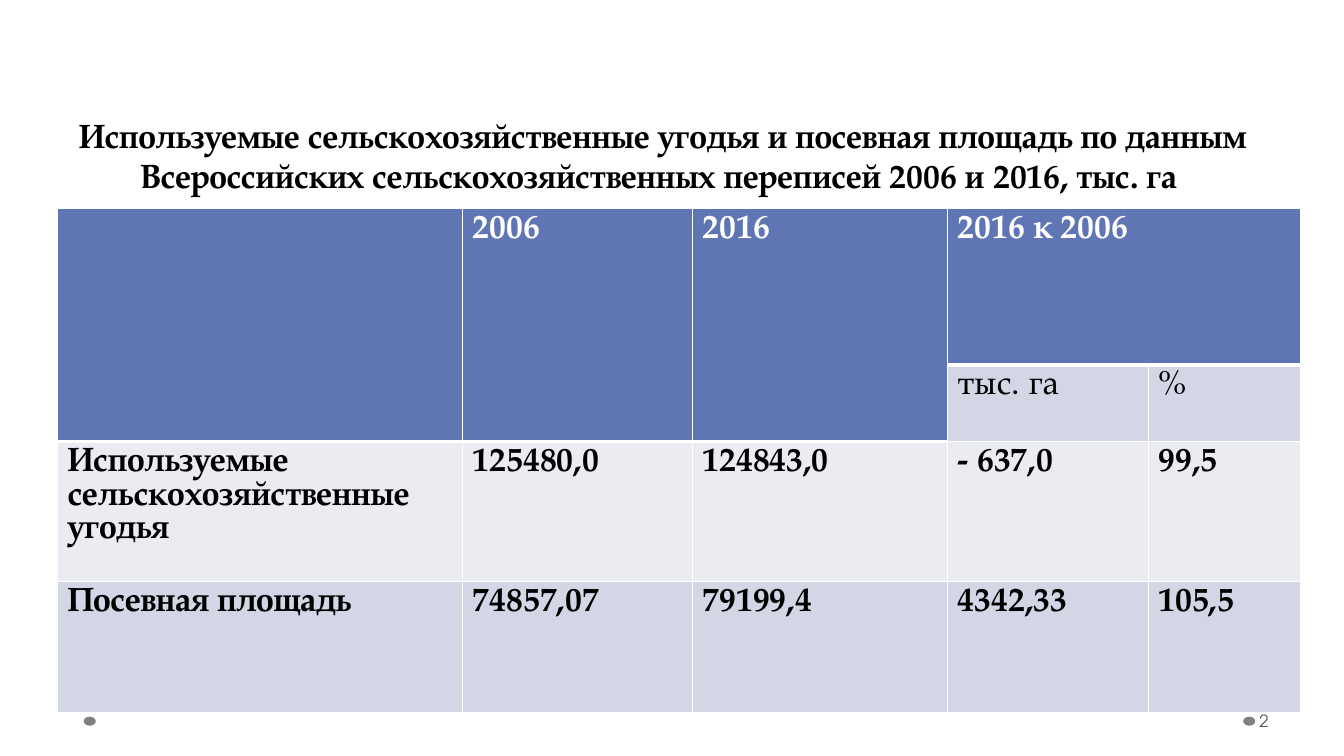
from lxml import etree
from pptx import Presentation
from pptx.dml.color import RGBColor
from pptx.enum.shapes import MSO_SHAPE
from pptx.enum.text import MSO_ANCHOR, MSO_AUTO_SIZE, PP_ALIGN
from pptx.oxml.ns import qn
from pptx.util import Inches, Pt

# Content
TITLE = ("Используемые сельскохозяйственные угодья и посевная площадь по данным "
         "Всероссийских сельскохозяйственных переписей 2006 и 2016, тыс. га ")
ROWS = [
    ("", "2006", "2016", "2016 к 2006", ""),
    ("", "", "", "тыс. га", "%"),
    ("Используемые сельскохозяйственные угодья", "125480,0", "124843,0", "- 637,0", "99,5"),
    ("Посевная площадь", "74857,07", "79199,4", "4342,33", "105,5"),
]
PAGE_NUMBER = "2"

# Format
COL_WIDTHS = (4.02, 2.28, 2.53, 1.99, 1.51)
ROW_HEIGHTS = (1.55, 0.76, 1.39, 1.3)
TALL_HEADERS = 3  # leading columns whose header spans two rows
SERIF, SANS = "TeX Gyre Pagella", "TeX Gyre Adventor"
BLACK = RGBColor(0x00, 0x00, 0x00)
WHITE = RGBColor(0xFF, 0xFF, 0xFF)
HEADER_BLUE = RGBColor(0x60, 0x76, 0xB4)
BAND_DARK = RGBColor(0xD2, 0xD6, 0xE5)
BAND_LIGHT = RGBColor(0xEA, 0xEC, 0xF2)
DOT_GREY = RGBColor(0x80, 0x80, 0x80)
NUMBER_GREY = RGBColor(0x59, 0x59, 0x59)
CENTER, LEFT = PP_ALIGN.CENTER, PP_ALIGN.LEFT
MIDDLE, BOTTOM = MSO_ANCHOR.MIDDLE, MSO_ANCHOR.BOTTOM
NO_AUTOFIT = MSO_AUTO_SIZE.NONE
OVAL = MSO_SHAPE.OVAL


def write(frame, text, font=SERIF, size=24, color=BLACK, bold=False, align=LEFT, spacing=None):
    paragraph = frame.paragraphs[0]
    paragraph.alignment = align
    paragraph.line_spacing = spacing
    run = paragraph.add_run()
    run.text = text
    run.font.name, run.font.size, run.font.bold = font, Pt(size), bold
    run.font.color.rgb = color


def is_header(row, col):
    return row == 0 or (row == 1 and col < TALL_HEADERS)


def add_border(cell, side, points):
    line = etree.SubElement(cell._tc.get_or_add_tcPr(), qn("a:ln" + side), w=str(Pt(points)))
    fill = etree.SubElement(line, qn("a:solidFill"))
    etree.SubElement(fill, qn("a:srgbClr"), val=str(WHITE))


prs = Presentation()
prs.slide_width, prs.slide_height = Inches(13.33), Inches(7.5)
slide = prs.slides.add_slide(prs.slide_layouts[5])

# Footer dots
for left in (12.33, 0.83):
    dot = slide.shapes.add_shape(OVAL, Inches(left), Inches(7.11), Inches(0.12), Inches(0.09))
    dot.shadow.inherit = False
    dot.fill.solid()
    dot.fill.fore_color.rgb = DOT_GREY
    dot.line.fill.background()

# Title
title = slide.shapes.title
title.left, title.top = Inches(0.49), Inches(0.63)
title.width, title.height = Inches(12.17), Inches(1.36)
title.text_frame.word_wrap = True
title.text_frame.auto_size = NO_AUTOFIT
title.text_frame.vertical_anchor = BOTTOM
write(title.text_frame, TITLE, bold=True, align=CENTER)

# Page number
number = slide.shapes.add_textbox(Inches(12.46), Inches(6.95), Inches(0.82), Inches(0.4)).text_frame
number.word_wrap = True
number.vertical_anchor = MIDDLE
number.margin_left, number.margin_right = Inches(0.03), Inches(0.05)
write(number, PAGE_NUMBER, font=SANS, size=12, color=NUMBER_GREY)

# Table
table = slide.shapes.add_table(
    len(ROWS), len(COL_WIDTHS), Inches(0.57), Inches(2.07),
    Inches(sum(COL_WIDTHS)), Inches(sum(ROW_HEIGHTS))).table
for column, width in zip(table.columns, COL_WIDTHS):
    column.width = Inches(width)
for table_row, height in zip(table.rows, ROW_HEIGHTS):
    table_row.height = Inches(height)
for col in range(TALL_HEADERS):
    table.cell(0, col).merge(table.cell(1, col))
table.cell(0, TALL_HEADERS).merge(table.cell(0, len(COL_WIDTHS) - 1))

for row, texts in enumerate(ROWS):
    for col, text in enumerate(texts):
        cell = table.cell(row, col)
        header = is_header(row, col)
        under_header = row > 0 and not header and is_header(row - 1, col)
        for side, points in (("L", 1), ("R", 1), ("T", 3 if under_header else 1),
                             ("B", 3 if header else 1)):
            add_border(cell, side, points)
        cell.fill.solid()
        cell.fill.fore_color.rgb = HEADER_BLUE if header else BAND_DARK if row % 2 else BAND_LIGHT
        if text:
            write(cell.text_frame, text, color=WHITE if header else BLACK,
                  bold=row != 1, spacing=Pt(24))

prs.save("out.pptx")
